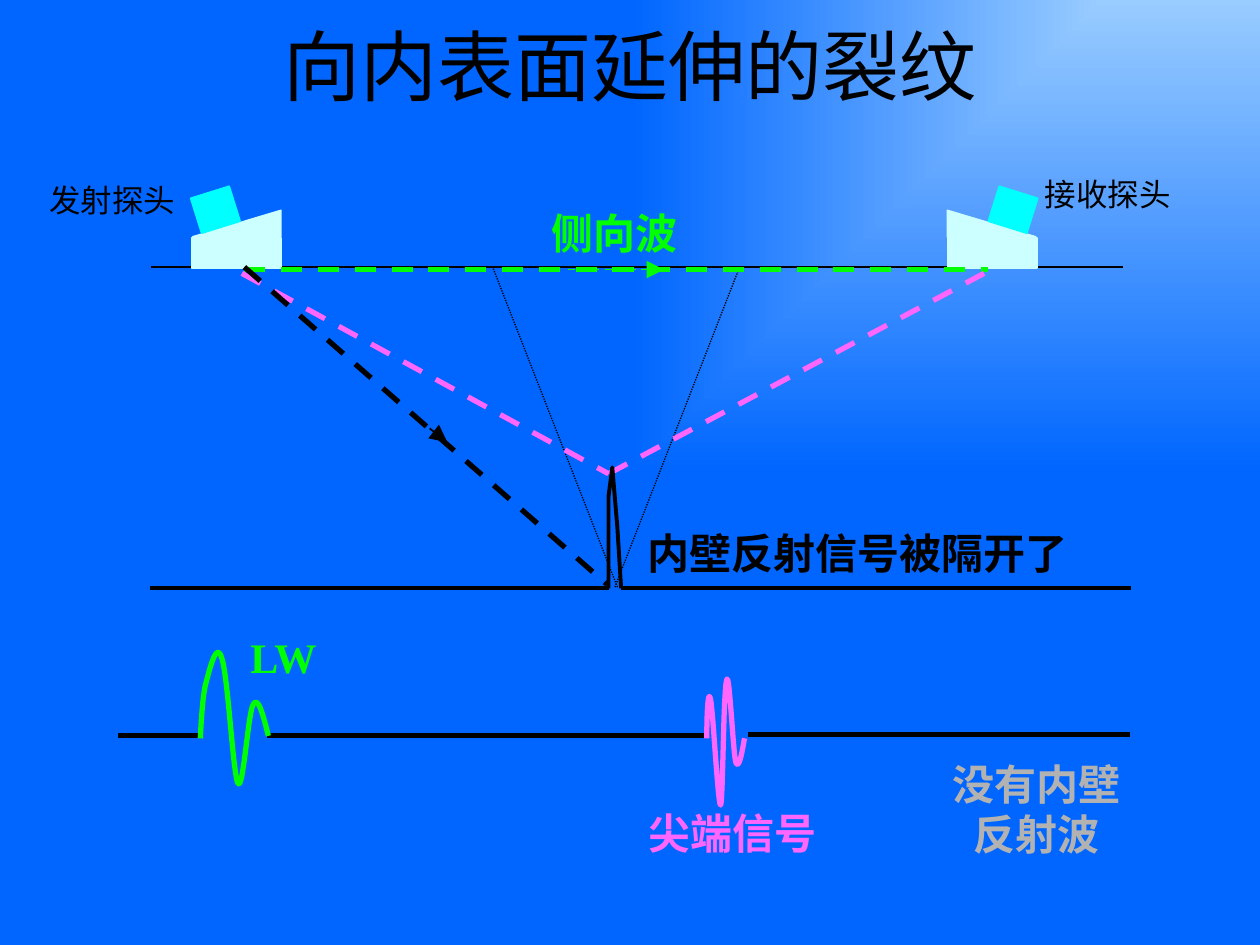
import pptx
import pptx.dml.color
import pptx.enum.dml
import pptx.enum.shapes
import pptx.enum.text
import pptx.oxml
import pptx.oxml.ns
import pptx.util
from pptx.util import Inches

SHAPES = pptx.enum.shapes.MSO_SHAPE
DASHES = pptx.enum.dml.MSO_LINE
qn = pptx.oxml.ns.qn

BLACK, GREEN, PINK, GRAY = "000000", "00FF00", "FF66FF", "B2B2B2"
WEDGE, CRYSTAL = "CCFFFF", "00FFFF"
MIRROR_WIDTH = 9.75  # left edge of one probe plus right edge of the other


def color(hex_string):
    return pptx.dml.color.RGBColor.from_string(hex_string)


def curve_points(start, segments, steps=12):
    """Sample a chain of cubic Bezier segments (x1, y1, x2, y2, x3, y3)."""
    points = [start]
    for segment in segments:
        controls = [points[-1], segment[:2], segment[2:4], segment[4:]]
        for step in range(1, steps + 1):
            t = step / steps
            weights = ((1 - t) ** 3, 3 * t * (1 - t) ** 2, 3 * t * t * (1 - t), t ** 3)
            points.append(tuple(
                sum(weight * control[axis] for weight, control in zip(weights, controls))
                for axis in (0, 1)))
    return points


class Diagram:
    font_name = "Times New Roman"

    def __init__(self, slide):
        self.slide = slide

    def background(self, inner, outer):
        """Fill with a rectangular gradient that spreads from the top right corner."""
        fill = self.slide.background.fill
        fill.gradient()
        for stop, hex_string in zip(fill.gradient_stops, (inner, outer)):
            stop.color.rgb = color(hex_string)
        gradient = self.slide.element.find(".//" + qn("a:gradFill"))
        gradient.replace(gradient.find(qn("a:lin")), pptx.oxml.parse_xml(
            f'<a:path {pptx.oxml.ns.nsdecls("a")} path="rect">'
            '<a:fillToRect l="100000" b="100000"/></a:path>'))

    def text(self, words, left, top, width, height, hex_string=BLACK, size=24,
             bold=True, wrap=False):
        box = self.slide.shapes.add_textbox(*map(Inches, (left, top, width, height)))
        frame = box.text_frame
        frame.text = words
        frame.word_wrap = wrap
        frame.vertical_anchor = pptx.enum.text.MSO_ANCHOR.MIDDLE
        paragraph = frame.paragraphs[0]
        paragraph.alignment = pptx.enum.text.PP_ALIGN.CENTER
        font = paragraph.runs[0].font
        font.name, font.size, font.bold = self.font_name, pptx.util.Pt(size), bold
        font.color.rgb = color(hex_string)

    def stroke(self, line, hex_string, width, dash=None):
        line.color.rgb = color(hex_string)
        line.width = pptx.util.Pt(width)
        if dash:
            line.dash_style = dash

    def line(self, start, end, hex_string=BLACK, width=3, dash=None, arrow=False):
        connector = self.slide.shapes.add_connector(
            pptx.enum.shapes.MSO_CONNECTOR.STRAIGHT, *map(Inches, (*start, *end)))
        self.stroke(connector.line, hex_string, width, dash)
        properties = connector.element.spPr
        if arrow:
            outline = properties.find(qn("a:ln"))
            outline.append(outline.makeelement(
                qn("a:tailEnd"), {"type": "triangle", "w": "lg", "len": "lg"}))
        properties.append(properties.makeelement(qn("a:effectLst"), {}))

    def shape(self, kind, left, top, width, height, hex_string, rotation=0, flip=False):
        shape = self.slide.shapes.add_shape(
            kind, *map(Inches, (left, top, width, height)))
        shape.shadow.inherit = False
        shape.fill.solid()
        shape.fill.fore_color.rgb = color(hex_string)
        self.stroke(shape.line, hex_string, 1)
        shape.rotation = rotation
        if flip:
            shape.element.spPr.find(qn("a:xfrm")).set("flipH", "1")

    def outline(self, points, hex_string, width):
        vertices = [(Inches(x), Inches(y)) for x, y in points]
        builder = self.slide.shapes.build_freeform(*vertices[0])
        builder.add_line_segments(vertices[1:], close=False)
        shape = builder.convert_to_shape()
        shape.shadow.inherit = False
        shape.fill.background()
        self.stroke(shape.line, hex_string, width)

    def probe(self, receiver):
        """Draw the transmitter, or the receiver as its mirror image."""
        for kind, left, top, width, height, hex_string, rotation in (
                (SHAPES.RECTANGLE, 1.52, 1.89, 0.71, 0.24, WEDGE, 0),
                (SHAPES.RIGHT_TRIANGLE, 1.53, 1.67, 0.7, 0.21, WEDGE, 0),
                (SHAPES.RECTANGLE, 1.55, 1.52, 0.32, 0.29, CRYSTAL, -17.4)):
            if receiver:
                left, rotation = MIRROR_WIDTH - left - width, -rotation
            flip = kind == SHAPES.RIGHT_TRIANGLE and not receiver
            self.shape(kind, left, top, width, height, hex_string, rotation, flip)


def main():
    presentation = pptx.Presentation()
    presentation.slide_width, presentation.slide_height = Inches(10), Inches(7.5)
    diagram = Diagram(presentation.slides.add_slide(presentation.slide_layouts[6]))
    diagram.background("99CCFF", "0066FF")
    diagram.text("向内表面延伸的裂纹", 0, 0, 10, 1.02, size=44, bold=False, wrap=True)

    # Outer surface, beam limits and probes
    diagram.line((1.2, 2.12), (8.91, 2.12), width=1.5)
    for foot, top in ((4.9, 3.91), (4.88, 5.87)):
        diagram.line((foot, 4.66), (top, 2.12), width=0.75, dash=DASHES.ROUND_DOT)
    for receiver in (False, True):
        diagram.probe(receiver)
    diagram.text("发射探头", 0.29, 1.39, 1.2, 0.4, size=18, bold=False)
    diagram.text("接收探头", 8.19, 1.34, 1.2, 0.4, size=18, bold=False)

    # Baseline of the received signal
    for left, right, y in ((0.94, 1.59, 5.84), (2.12, 5.61, 5.84), (5.94, 8.97, 5.83)):
        diagram.line((left, y), (right, y))

    # Lateral wave
    diagram.line((1.94, 2.14), (7.84, 2.14), GREEN, dash=DASHES.DASH)
    diagram.line((4.51, 2.14), (5.27, 2.14), GREEN, 1, DASHES.DASH, arrow=True)
    diagram.text("侧向波", 4.28, 1.6, 1.2, 0.5, GREEN)
    diagram.outline(curve_points((1.59, 5.86), [
        (1.6, 5.68, 1.61, 5.5, 1.64, 5.4),
        (1.67, 5.29, 1.72, 5.09, 1.76, 5.22),
        (1.81, 5.36, 1.85, 6.16, 1.89, 6.22),
        (1.93, 6.28, 1.97, 5.65, 2.01, 5.59),
        (2.05, 5.52, 2.09, 5.68, 2.13, 5.84)]), GREEN, 3)
    diagram.text("LW", 1.87, 4.96, 0.76, 0.5, GREEN)

    # Wave diffracted at the crack tip
    for start, end in (((1.92, 2.17), (4.83, 3.76)), ((4.83, 3.76), (7.81, 2.17))):
        diagram.line(start, end, PINK, dash=DASHES.DASH)
    diagram.outline(curve_points((5.61, 5.86), [
        (5.61, 5.66, 5.62, 5.46, 5.64, 5.55),
        (5.66, 5.64, 5.7, 6.41, 5.72, 6.39),
        (5.74, 6.36, 5.74, 5.45, 5.77, 5.39),
        (5.79, 5.34, 5.82, 5.98, 5.84, 6.05),
        (5.87, 6.13, 5.9, 5.9, 5.91, 5.86)]), PINK, 3)
    diagram.text("尖端信号", 5.04, 6.36, 1.54, 0.5, PINK)

    # Crack and inner surface
    diagram.outline([(4.83, 4.67), (4.83, 3.94), (4.86, 3.71), (4.9, 4.18),
                     (4.93, 4.67)], BLACK, 2.25)
    for left, right in ((1.19, 4.83), (4.93, 8.98)):
        diagram.line((left, 4.67), (right, 4.67), width=2.25)

    # Blocked inner wall reflection
    diagram.line((3.41, 3.4), (3.55, 3.51), width=1, arrow=True)
    diagram.line((1.94, 2.12), (4.82, 4.64), dash=DASHES.DASH)
    diagram.text("内壁反射信号被隔开了", 5.02, 4.14, 3.57, 0.5)
    diagram.text("没有内壁反射波", 7.31, 5.97, 1.83, 0.9, GRAY, wrap=True)
    presentation.save("out.pptx")


if __name__ == "__main__":
    main()
